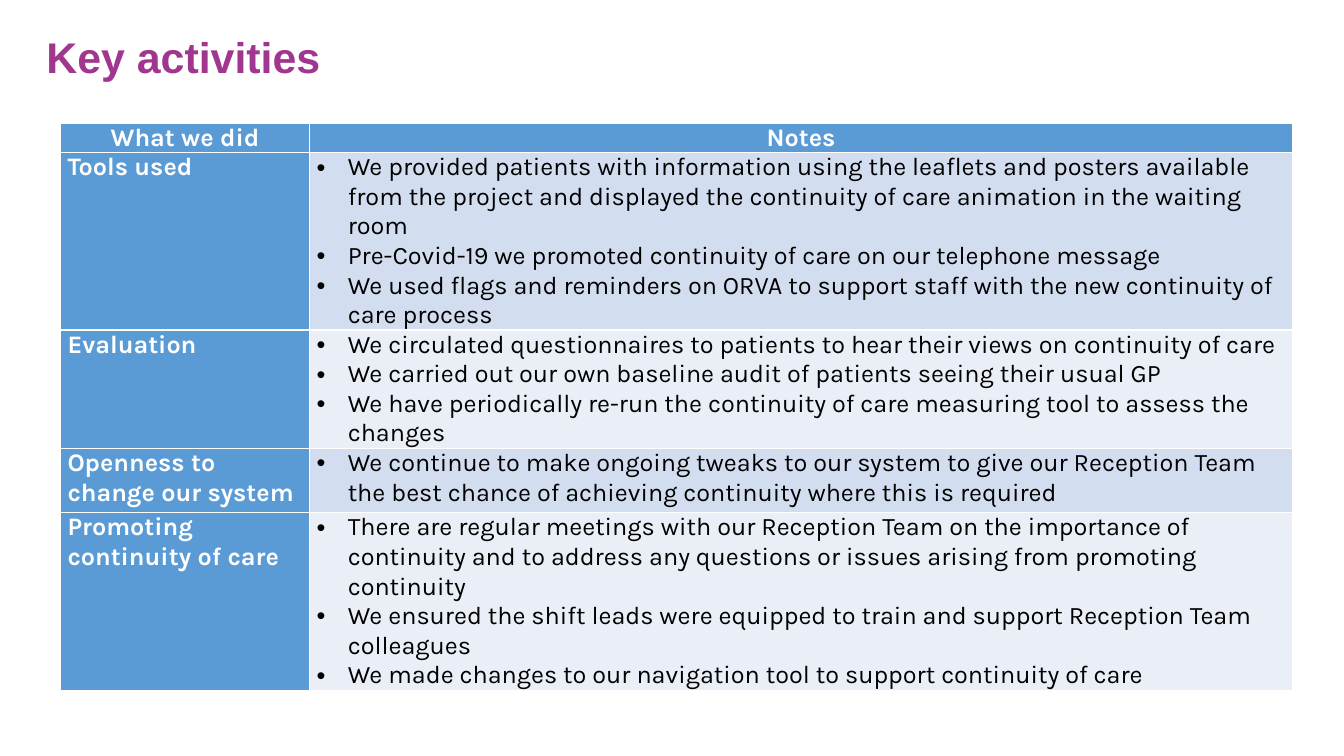
import pptx
import pptx.dml.color
import pptx.enum.text
import pptx.oxml.ns
import pptx.util
from dataclasses import dataclass
from lxml import etree

TITLE = "Key activities"
HEADINGS = ("What we did", "Notes")
ACTIVITIES = [
    ("Tools used", [
        "We provided patients with information using the leaflets and posters available from the project "
        "and displayed the continuity of care animation in the waiting room",
        "Pre-Covid-19 we promoted continuity of care on our telephone message",
        "We used flags and reminders on ORVA to support staff with the new continuity of care process",
    ]),
    ("Evaluation", [
        "We circulated questionnaires to patients to hear their views on continuity of care",
        "We carried out our own baseline audit of patients seeing their usual GP",
        "We have periodically re-run the continuity of care measuring tool to assess the changes",
    ]),
    ("Openness to change our system", [
        "We continue to make ongoing tweaks to our system to give our Reception Team "
        "the best chance of achieving continuity where this is required",
    ]),
    ("Promoting continuity of care", [
        "There are regular meetings with our Reception Team on the importance of continuity "
        "and to address any questions or issues arising from promoting continuity",
        "We ensured the shift leads were equipped to train and support Reception Team colleagues",
        "We made changes to our navigation tool to support continuity of care",
    ]),
]
COLUMN_WIDTHS = (2.47, 9.75)
ROW_HEIGHTS = (0.27, 1.37, 0.85, 0.64, 1.7)

Inches = pptx.util.Inches
PP_ALIGN = pptx.enum.text.PP_ALIGN


@dataclass(frozen=True)
class Theme:
    title_font: str = "Arial"
    table_font: str = "Karla"
    title_size: float = 30.6
    table_size: float = 18
    title: str = "A1368F"
    heading: str = "5B9BD5"
    heading_text: str = "FFFFFF"
    note_text: str = "000000"
    bands: tuple = ("D2DEEF", "EAEFF7")


THEME = Theme()


def style(para, font, size, color, bold):
    for span in para.runs:
        span.font.name = font
        span.font.size = pptx.util.Pt(size)
        span.font.bold = bold
        span.font.color.rgb = pptx.dml.color.RGBColor.from_string(color)


def add_bullet(para):
    properties = para._p.get_or_add_pPr()
    properties.set("marL", str(Inches(0.31)))
    properties.set("indent", str(-Inches(0.31)))
    for tag, key, value in (("a:buFont", "typeface", "Arial"), ("a:buChar", "char", "•")):
        etree.SubElement(properties, pptx.oxml.ns.qn(tag)).set(key, value)


def fill_cell(cell, lines, fill, color, bold, align=PP_ALIGN.LEFT, bullets=False):
    cell.margin_left = cell.margin_right = Inches(0.07)
    cell.margin_top = cell.margin_bottom = 0
    cell.fill.solid()
    cell.fill.fore_color.rgb = pptx.dml.color.RGBColor.from_string(fill)
    cell.text_frame.text = "\n".join(lines)
    for para in cell.text_frame.paragraphs:
        para.alignment = align
        if bullets:
            add_bullet(para)
        style(para, THEME.table_font, THEME.table_size, color, bold)


def add_title(page):
    box = page.shapes.title
    box.left, box.top, box.width, box.height = map(Inches, (0.36, 0.32, 10.74, 0.55))
    frame = box.text_frame
    frame.text = TITLE
    frame.vertical_anchor = pptx.enum.text.MSO_ANCHOR.MIDDLE
    para = frame.paragraphs[0]
    para.alignment = PP_ALIGN.LEFT
    para.line_spacing = 0.9
    style(para, THEME.title_font, THEME.title_size, THEME.title, True)


def add_activities(page):
    table = page.shapes.add_table(
        len(ROW_HEIGHTS), len(COLUMN_WIDTHS), Inches(0.6), Inches(1.22),
        Inches(sum(COLUMN_WIDTHS)), Inches(sum(ROW_HEIGHTS))).table
    table.first_col = True
    for column, width in zip(table.columns, COLUMN_WIDTHS):
        column.width = Inches(width)
    for row, height in zip(table.rows, ROW_HEIGHTS):
        row.height = Inches(height)
    for index, heading in enumerate(HEADINGS):
        fill_cell(table.cell(0, index), [heading], THEME.heading, THEME.heading_text, True, PP_ALIGN.CENTER)
    for index, (activity, notes) in enumerate(ACTIVITIES):
        band = THEME.bands[index % len(THEME.bands)]
        fill_cell(table.cell(index + 1, 0), [activity], THEME.heading, THEME.heading_text, True)
        fill_cell(table.cell(index + 1, 1), notes, band, THEME.note_text, False, bullets=True)


def main():
    deck = pptx.Presentation()
    deck.slide_width, deck.slide_height = Inches(13.33), Inches(7.5)
    page = deck.slides.add_slide(deck.slide_layouts.get_by_name("Title Only"))
    add_title(page)
    add_activities(page)
    deck.save("out.pptx")


if __name__ == "__main__":
    main()
